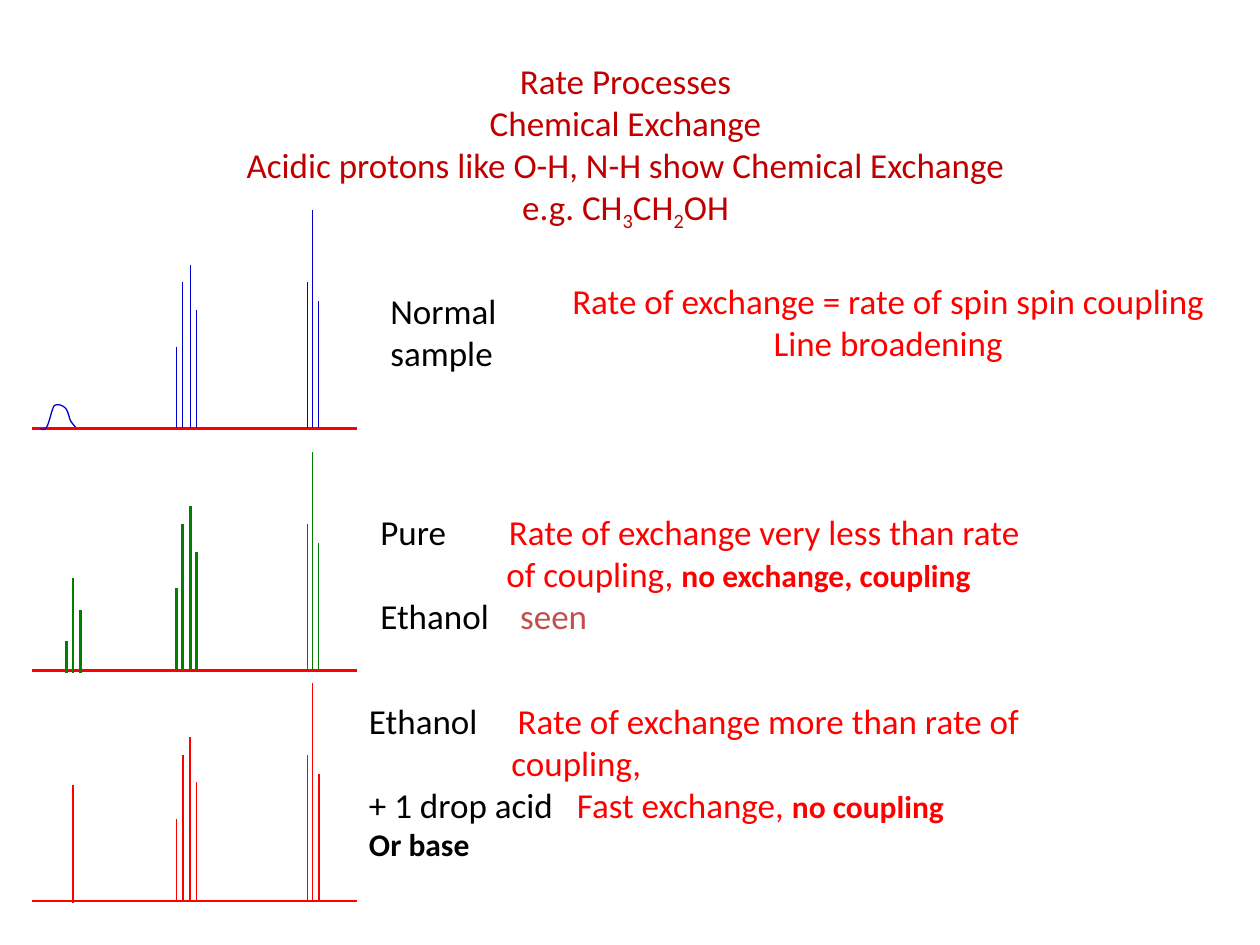
from dataclasses import dataclass

from lxml import etree
from pptx import Presentation
from pptx.dml.color import RGBColor
from pptx.enum.shapes import MSO_CONNECTOR
from pptx.enum.text import MSO_AUTO_SIZE, PP_ALIGN
from pptx.oxml.ns import qn
from pptx.util import Inches, Pt

STRAIGHT = MSO_CONNECTOR.STRAIGHT
LEFT, CENTER = PP_ALIGN.LEFT, PP_ALIGN.CENTER
GROW = MSO_AUTO_SIZE.SHAPE_TO_FIT_TEXT


@dataclass(frozen=True)
class Theme:
    font: str = "Calibri"
    title: str = "C00000"
    red: str = "FF0000"
    blue: str = "0000CC"
    green: str = "008000"
    black: str = "000000"
    rust: str = "C0504D"
    body_size: int = 20
    strong_size: int = 18
    thin: float = 0.75
    medium: float = 1
    thick: float = 1.5


THEME = Theme()


@dataclass(frozen=True)
class Span:
    text: str
    color: str
    strong: bool = False
    subscript: bool = False


@dataclass(frozen=True)
class Line:
    spans: tuple[Span, ...]
    tab: float | None = None


@dataclass(frozen=True)
class Label:
    left: float
    top: float
    width: float
    height: float
    lines: tuple[Line, ...]
    align: PP_ALIGN = LEFT
    wrap: bool = False


@dataclass(frozen=True)
class Peak:
    x: float
    height: float
    width: float
    drop: float = 0


@dataclass(frozen=True)
class Spectrum:
    base: float
    color: str
    triplet_width: float
    quartet_width: float
    hydroxyl: tuple[Peak, ...] = ()
    broad_hydroxyl: bool = False


AXIS_LEFT, AXIS_RIGHT = 0.25, 2.83
TRIPLET = ((2.48, 1.73), (2.53, 1.01), (2.44, 1.16))
QUARTET = ((1.51, 1.3), (1.45, 1.16), (1.56, 0.94), (1.4, 0.65))
# Cubic curve of the broad O-H signal: x, and height above the baseline
BROAD_START = (0.32, 0)
BROAD_CURVES = (
    ((0.34, -0.01), (0.35, -0.02), (0.37, 0.01)),
    ((0.39, 0.04), (0.41, 0.15), (0.43, 0.18)),
    ((0.46, 0.2), (0.5, 0.18), (0.52, 0.16)),
    ((0.54, 0.14), (0.55, 0.08), (0.56, 0.06)),
    ((0.58, 0.03), (0.6, 0.01), (0.6, 0.01)),
)
CURVE_STEPS = 8

SPECTRA = (
    Spectrum(3.4, THEME.blue, THEME.thin, THEME.thin, broad_hydroxyl=True),
    Spectrum(5.32, THEME.green, THEME.thin, THEME.thick, (
        Peak(0.58, 0.73, THEME.thin, 0.02),
        Peak(0.64, 0.48, THEME.thick, 0.02),
        Peak(0.53, 0.23, THEME.thick, 0.02))),
    Spectrum(7.15, THEME.red, THEME.medium, THEME.medium, (
        Peak(0.58, 0.92, THEME.medium, 0.02),)),
)


def plain(text: str, color: str) -> Line:
    return Line((Span(text, color),))


LABELS = (
    Label(1.83, 0.42, 6.27, 1.45, (
        plain("Rate Processes", THEME.title),
        plain("Chemical Exchange", THEME.title),
        plain("Acidic protons like O-H, N-H show Chemical Exchange", THEME.title),
        Line((Span("e.g. CH", THEME.title), Span("3", THEME.title, subscript=True),
              Span("CH", THEME.title), Span("2", THEME.title, subscript=True),
              Span("OH", THEME.title)))), CENTER),
    Label(3, 2.25, 1.05, 0.77, (
        plain("Normal", THEME.black), plain("sample", THEME.black))),
    Label(4.17, 2.17, 5.76, 0.77, (
        plain("Rate of exchange = rate of spin spin coupling", THEME.red),
        plain("Line broadening", THEME.red)), CENTER),
    Label(2.92, 4, 5.99, 1.1, (
        Line((Span("Pure\t", THEME.black),
              Span("Rate of exchange very less than rate", THEME.red)), 1.02),
        Line((Span("\tof coupling, ", THEME.red),
              Span("no exchange, coupling", THEME.red, strong=True)), 1),
        Line((Span("Ethanol\t", THEME.black), Span("seen", THEME.rust)), 1.11)),
        wrap=True),
    Label(2.83, 5.5, 6.92, 1.73, (
        Line((Span("Ethanol\t", THEME.black),
              Span("Rate of exchange more than rate of", THEME.red)), 1.18),
        Line((Span("\tcoupling,", THEME.red),), 1.13),
        Line((Span("+ 1 drop acid\t", THEME.black),
              Span("Fast exchange, ", THEME.red),
              Span("no coupling", THEME.red, strong=True)), 1.65),
        Line((Span("Or base", THEME.black, strong=True),))),
        wrap=True),
)


def draw_line(shapes, start: tuple, end: tuple, color: str, width: float) -> None:
    line = shapes.add_connector(STRAIGHT, *map(Inches, start + end))
    line.line.color.rgb = RGBColor.from_string(color)
    line.line.width = Pt(width)
    etree.SubElement(line._element.spPr, qn("a:effectLst"))


def broad_points(base: float) -> list[tuple]:
    """Sample the cubic curves of the broad signal."""
    points, start = [], BROAD_START
    for first, second, end in BROAD_CURVES:
        for step in range(1, CURVE_STEPS + 1):
            t = step / CURVE_STEPS
            weights = ((1 - t) ** 3, 3 * t * (1 - t) ** 2, 3 * t * t * (1 - t), t ** 3)
            x, height = (sum(w * p[axis] for w, p in zip(weights, (start, first, second, end)))
                         for axis in (0, 1))
            points.append((Inches(x), Inches(base - height)))
        start = end
    return points


def draw_broad_signal(shapes, base: float, color: str) -> None:
    builder = shapes.build_freeform(Inches(BROAD_START[0]), Inches(base))
    builder.add_line_segments(broad_points(base), close=False)
    signal = builder.convert_to_shape()
    signal.shadow.inherit = False
    signal.fill.background()
    signal.line.color.rgb = RGBColor.from_string(color)
    signal.line.width = Pt(THEME.thin)


def draw_spectrum(page, spectrum: Spectrum) -> None:
    shapes = page.shapes.add_group_shape().shapes
    base = spectrum.base
    draw_line(shapes, (AXIS_LEFT, base), (AXIS_RIGHT, base), THEME.red, THEME.thick)
    peaks = [Peak(x, height, spectrum.triplet_width) for x, height in TRIPLET]
    peaks += [Peak(x, height, spectrum.quartet_width) for x, height in QUARTET]
    for peak in (*peaks, *spectrum.hydroxyl):
        draw_line(shapes, (peak.x, base - peak.height), (peak.x, base + peak.drop),
                  spectrum.color, peak.width)
    if spectrum.broad_hydroxyl:
        draw_broad_signal(shapes, base, spectrum.color)


def set_tab(para, position: float) -> None:
    tabs = etree.Element(qn("a:tabLst"))
    etree.SubElement(tabs, qn("a:tab"), pos=str(Inches(position)), algn="l")
    para._p.get_or_add_pPr().insert(0, tabs)


def draw_label(page, label: Label) -> None:
    box = page.shapes.add_textbox(*map(Inches, (label.left, label.top, label.width, label.height)))
    frame = box.text_frame
    frame.word_wrap = label.wrap
    frame.auto_size = GROW
    for index, line in enumerate(label.lines):
        para = frame.add_paragraph() if index else frame.paragraphs[0]
        para.alignment = label.align
        para.font.name = THEME.font
        if line.tab is not None:
            set_tab(para, line.tab)
        for span in line.spans:
            run = para.add_run()
            run.text = span.text
            run.font.size = Pt(THEME.strong_size if span.strong else THEME.body_size)
            run.font.bold = span.strong
            run.font.color.rgb = RGBColor.from_string(span.color)
            if span.subscript:
                run._r.get_or_add_rPr().set("baseline", "-25000")


def main() -> None:
    deck = Presentation()
    deck.slide_width, deck.slide_height = Inches(10), Inches(7.5)
    page = deck.slides.add_slide(deck.slide_layouts[6])
    for spectrum in SPECTRA:
        draw_spectrum(page, spectrum)
    for label in LABELS:
        draw_label(page, label)
    deck.save("out.pptx")


if __name__ == "__main__":
    main()
